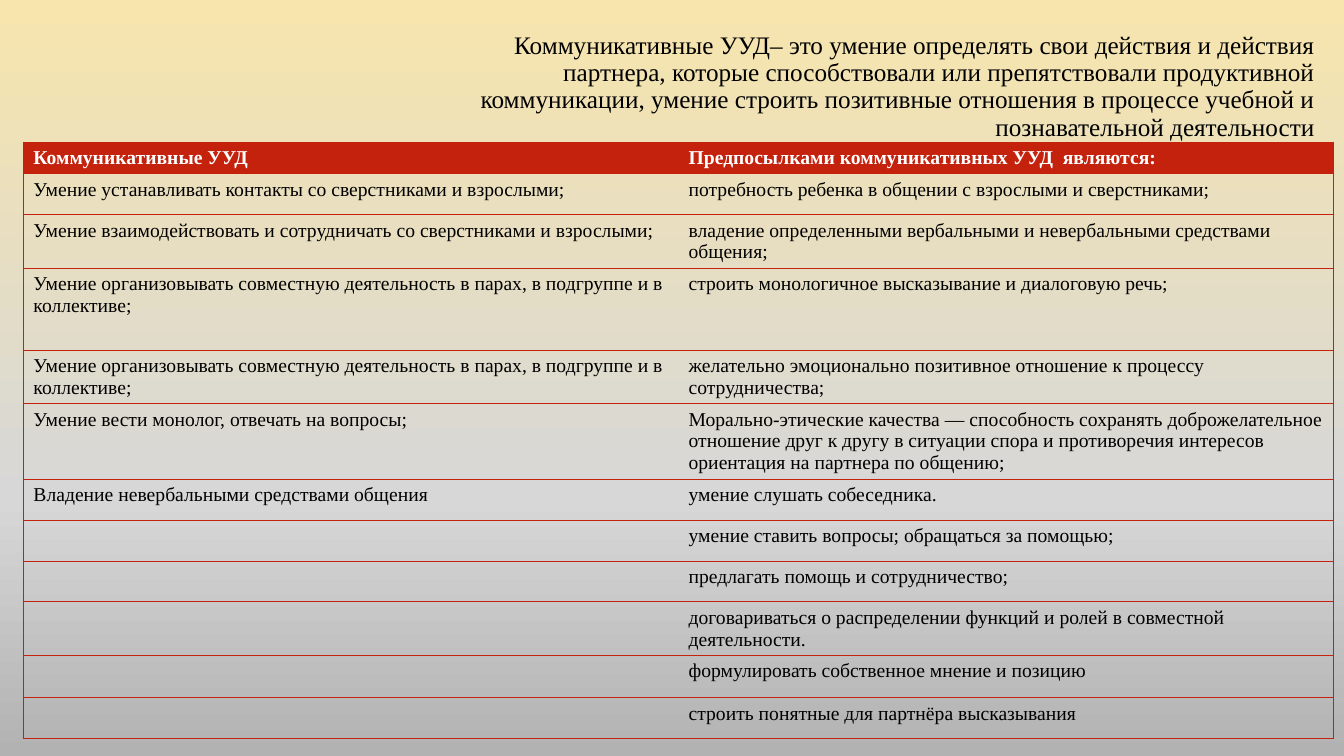
import copy
from dataclasses import dataclass

import pptx
import pptx.dml.color
import pptx.enum.text
import pptx.oxml
import pptx.oxml.ns
import pptx.util

Cm = pptx.util.Cm
Pt = pptx.util.Pt
RGBColor = pptx.dml.color.RGBColor

RED = RGBColor(0xC4, 0x22, 0x0D)
BLACK = RGBColor(0x00, 0x00, 0x00)
WHITE = RGBColor(0xFF, 0xFF, 0xFF)
CREAM = RGBColor(0xF7, 0xE5, 0xAD)
SILVER = RGBColor(0xD7, 0xD7, 0xD7)
GREY = RGBColor(0xB2, 0xB2, 0xB2)

BACKDROP = ((0, CREAM), (0.66, SILVER), (1, GREY))
FACE = "Times New Roman"
TITLE_FONT = {"name": FACE, "size": Pt(18), "bold": False}
HEADER_FONT = {"name": FACE, "size": Pt(14), "bold": True}
BODY_FONT = {"name": FACE, "size": Pt(14), "bold": False}
COLUMN_WIDTH = Cm(16.51)

# Row heights in centimetres, by number of text lines
ONE_LINE, TWO_LINES, THREE_LINES = 1.03, 1.35, 1.89

DEFINITION = (
    "Коммуникативные УУД– это умение определять свои действия и действия партнера, "
    "которые способствовали или препятствовали продуктивной коммуникации, умение строить "
    "позитивные отношения в процессе учебной и познавательной деятельности"
)
TEAMWORK = "Умение организовывать совместную деятельность в парах, в подгруппе и в коллективе;"


@dataclass(frozen=True)
class SkillRow:
    skill: str
    premise: str
    height: float = ONE_LINE


SKILL_ROWS = (
    SkillRow("Коммуникативные УУД", "Предпосылками коммуникативных УУД  являются:", 0.8),
    SkillRow("Умение устанавливать контакты со сверстниками и взрослыми;",
             "потребность ребенка в общении с взрослыми и сверстниками;"),
    SkillRow("Умение взаимодействовать и сотрудничать со сверстниками и взрослыми;",
             "владение определенными вербальными и невербальными средствами общения;", TWO_LINES),
    SkillRow(TEAMWORK, "строить монологичное высказывание и диалоговую речь;", 2.06),
    SkillRow(TEAMWORK,
             "желательно эмоционально позитивное отношение к процессу сотрудничества;", TWO_LINES),
    SkillRow("Умение вести монолог, отвечать на вопросы;",
             "Морально-этические качества — способность сохранять доброжелательное отношение "
             "друг к другу в ситуации спора и противоречия интересов\n"
             "ориентация на партнера по общению;", THREE_LINES),
    SkillRow("Владение невербальными средствами общения", "умение слушать собеседника."),
    SkillRow("", "умение ставить вопросы; обращаться за помощью;"),
    SkillRow("", "предлагать помощь и сотрудничество;"),
    SkillRow("", "договариваться о распределении функций и ролей в совместной деятельности.",
             TWO_LINES),
    SkillRow("", "формулировать собственное мнение и позицию", 1.06),
    SkillRow("", "строить понятные для партнёра высказывания"),
)


def write_text(frame: pptx.text.text.TextFrame, text: str, font: dict, color: RGBColor) -> None:
    frame.text = text
    for paragraph in frame.paragraphs:
        for run in paragraph.runs:
            for attribute, value in font.items():
                setattr(run.font, attribute, value)
            run.font.color.rgb = color


def paint_backdrop(slide: pptx.slide.Slide) -> None:
    fill = slide.background.fill
    fill.gradient()
    fill.gradient_angle = 270
    stop_list = slide.element.find(".//" + pptx.oxml.ns.qn("a:gsLst"))
    stop_list.append(copy.deepcopy(stop_list[-1]))
    for stop, (position, color) in zip(fill.gradient_stops, BACKDROP):
        stop.position = position
        stop.color.rgb = color


def set_borders(cell: pptx.table._Cell, visible_sides: str) -> None:
    """Rule the given sides (letters of LRTB) in red and clear the others."""
    properties = cell._tc.get_or_add_tcPr()
    for index, side in enumerate("LRTB"):
        paint = (f'<a:solidFill><a:srgbClr val="{RED}"/></a:solidFill>'
                 if side in visible_sides else "<a:noFill/>")
        properties.insert(index, pptx.oxml.parse_xml(
            f'<a:ln{side} {pptx.oxml.ns.nsdecls("a")} w="{Pt(0.75)}">{paint}</a:ln{side}>'))


def add_definition(slide: pptx.slide.Slide) -> None:
    definition = slide.shapes.add_textbox(Cm(10.8), Cm(1.24), Cm(22.58), Cm(1.91)).text_frame
    definition.word_wrap = True
    definition.vertical_anchor = pptx.enum.text.MSO_ANCHOR.MIDDLE
    write_text(definition, DEFINITION, TITLE_FONT, BLACK)
    definition.paragraphs[0].alignment = pptx.enum.text.PP_ALIGN.RIGHT
    definition.paragraphs[0].line_spacing = 0.9


def add_skill_table(slide: pptx.slide.Slide) -> None:
    total_height = Cm(sum(row.height for row in SKILL_ROWS))
    skills = slide.shapes.add_table(len(SKILL_ROWS), 2, Cm(0.59), Cm(3.58),
                                    2 * COLUMN_WIDTH, total_height).table
    skills.horz_banding = False
    for column in skills.columns:
        column.width = COLUMN_WIDTH
    for row_index, row in enumerate(SKILL_ROWS):
        skills.rows[row_index].height = Cm(row.height)
        is_header = row_index == 0
        for column_index, text in enumerate((row.skill, row.premise)):
            cell = skills.cell(row_index, column_index)
            cell.margin_bottom = Cm(0)
            write_text(cell.text_frame, text, HEADER_FONT if is_header else BODY_FONT,
                       WHITE if is_header else BLACK)
            if is_header:
                cell.fill.solid()
                cell.fill.fore_color.rgb = RED
            else:
                cell.fill.background()
            set_borders(cell, "TB" + "LR"[column_index])


def main() -> None:
    presentation = pptx.Presentation()
    presentation.slide_width = Cm(33.87)
    presentation.slide_height = Cm(19.05)
    slide = presentation.slides.add_slide(presentation.slide_layouts[6])
    paint_backdrop(slide)
    add_definition(slide)
    add_skill_table(slide)
    presentation.save("out.pptx")


if __name__ == "__main__":
    main()
